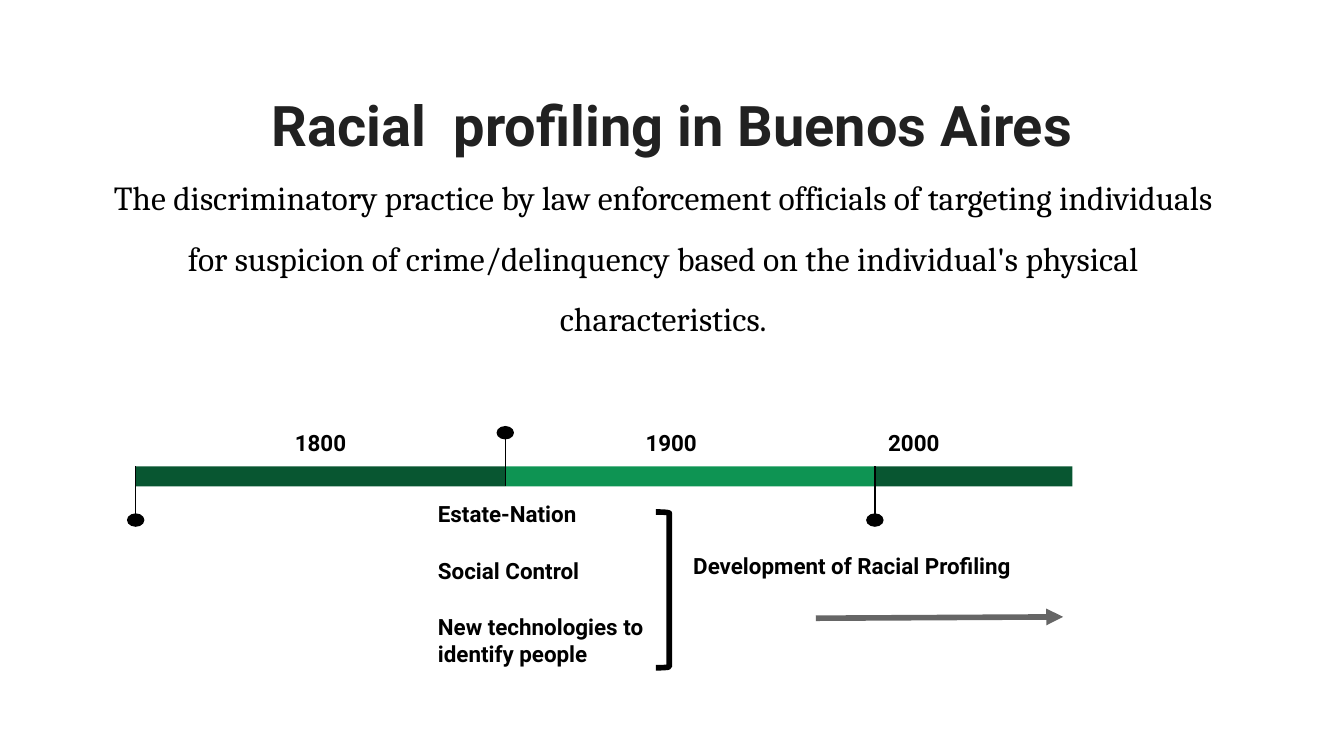
from lxml.etree import SubElement
from pptx import Presentation
from pptx.dml.color import RGBColor
from pptx.enum.shapes import MSO_CONNECTOR, MSO_SHAPE
from pptx.enum.text import MSO_ANCHOR, PP_ALIGN
from pptx.oxml.ns import qn
from pptx.util import Inches, Pt

BLACK = RGBColor(0x00, 0x00, 0x00)
CHARCOAL = RGBColor(0x21, 0x21, 0x21)
GRAY = RGBColor(0x66, 0x66, 0x66)
DARK_GREEN = RGBColor(0x08, 0x56, 0x31)
GREEN = RGBColor(0x0E, 0x94, 0x53)

SLIDE_WIDTH = 10
SLIDE_HEIGHT = SLIDE_WIDTH * 9 / 16
BAR_TOP, BAR_HEIGHT = 3.47, 0.15
PIN_LENGTH = 0.4
DOT_WIDTH, DOT_HEIGHT = 0.13, 0.1
YEAR_HEIGHT = 0.41

ERAS = [
    (1.01, 2.75, DARK_GREEN, False, "1800", 0.85, 1.05, PP_ALIGN.CENTER),
    (3.76, 2.75, GREEN, True, "1900", 0.75, 0.97, PP_ALIGN.CENTER),
    (6.51, 1.47, DARK_GREEN, False, "2000", 0, 1.05, PP_ALIGN.LEFT),
]
CAUSES = ["Estate-Nation", "Social Control", "New technologies to identify people"]


def add_text(slide, box, lines, size=12, font="Roboto", color=BLACK, bold=True,
             align=PP_ALIGN.LEFT, spacing=1.0, gap=0):
    """Place paragraphs of one style in a box, with a gap between them."""
    frame = slide.shapes.add_textbox(*map(Inches, box)).text_frame
    frame.word_wrap = True
    frame.vertical_anchor = MSO_ANCHOR.TOP
    frame.margin_left = frame.margin_right = Inches(0.1)
    frame.margin_top = frame.margin_bottom = Inches(0.1)
    frame.text = "\n".join(lines)
    for index, paragraph in enumerate(frame.paragraphs):
        paragraph.alignment = align
        paragraph.line_spacing = spacing
        paragraph.space_before = Pt(gap if index else 0)
        for run in paragraph.runs:
            run.font.name = font
            run.font.size = Pt(size)
            run.font.bold = bold
            run.font.color.rgb = color


def add_solid(slide, preset, box, color):
    """Place a filled shape without outline."""
    solid = slide.shapes.add_shape(preset, *map(Inches, box))
    solid.shadow.inherit = False
    solid.fill.solid()
    solid.fill.fore_color.rgb = color
    solid.line.fill.background()


def add_line(slide, start, end, color, weight):
    """Draw a straight line and return it."""
    line = slide.shapes.add_connector(
        MSO_CONNECTOR.STRAIGHT, *map(Inches, (*start, *end)))
    line.line.color.rgb = color
    line.line.width = Pt(weight)
    SubElement(line._element.spPr, qn("a:effectLst"))
    return line


def add_heading(slide, box, title, definition):
    """Place the title over the definition."""
    left, top, width, height = box
    add_text(slide, (left, top, width, 0.88), [title], 30, color=CHARCOAL,
             align=PP_ALIGN.CENTER, spacing=1.5)
    add_text(slide, (left + 0.25, top + 0.75, width - 0.63, height - 0.75),
             [definition], 18, "Cambria", bold=False,
             align=PP_ALIGN.CENTER, spacing=1.5)


def add_era(slide, box, color, pin_up, year, year_offset, year_width, align):
    """Place one timeline section with its pin and year."""
    left, top, width, height = box
    add_solid(slide, MSO_SHAPE.RECTANGLE, box, color)
    pin_start = top + height if pin_up else top
    pin_end = pin_start + (-PIN_LENGTH if pin_up else PIN_LENGTH)
    add_line(slide, (left, pin_start), (left, pin_end), BLACK, 0.75)
    add_solid(slide, MSO_SHAPE.OVAL,
              (left - DOT_WIDTH / 2, pin_end - DOT_HEIGHT / 2, DOT_WIDTH, DOT_HEIGHT),
              BLACK)
    add_text(slide, (left + year_offset, top - YEAR_HEIGHT, year_width, YEAR_HEIGHT),
             [year], align=align, spacing=1.15)


def add_causes(slide, box, causes):
    """List the causes and close them with a bracket."""
    left, top, width, height = box
    add_text(slide, box, causes, gap=16)
    bracket = slide.shapes.add_shape(
        MSO_SHAPE.RIGHT_BRACKET,
        *map(Inches, (left + width - 0.29, top + 0.19, 0.1, height - 0.43)))
    bracket.adjustments[0] = 0.083
    bracket.shadow.inherit = False
    bracket.fill.background()
    bracket.line.color.rgb = BLACK
    bracket.line.width = Pt(3)


def add_outcome(slide, box, outcome):
    """Place the outcome over an arrow to the right."""
    left, top, width, height = box
    add_text(slide, box, [outcome])
    arrow = add_line(slide, (left + 1.01, top + 0.59), (left + 2.85, top + 0.58), GRAY, 3)
    SubElement(arrow.line._get_or_add_ln(), qn("a:tailEnd"), type="triangle")


def main():
    """Build and save the slide."""
    presentation = Presentation()
    presentation.slide_width = Inches(SLIDE_WIDTH)
    presentation.slide_height = Inches(SLIDE_HEIGHT)
    slide = presentation.slides.add_slide(presentation.slide_layouts[6])
    add_heading(
        slide, (0.34, 0.32, 9.32, 1.95), "Racial  profiling in Buenos Aires",
        "The discriminatory practice by law enforcement officials of targeting "
        "individuals for suspicion of crime/delinquency based on the individual's "
        "physical characteristics.")
    for left, width, *details in ERAS:
        add_era(slide, (left, BAR_TOP, width, BAR_HEIGHT), *details)
    add_causes(slide, (3.16, 3.62, 2.01, 1.59), CAUSES)
    add_outcome(slide, (5.06, 4.01, 3.87, 1.03), "Development of Racial Profiling")
    presentation.save("out.pptx")


if __name__ == "__main__":
    main()
